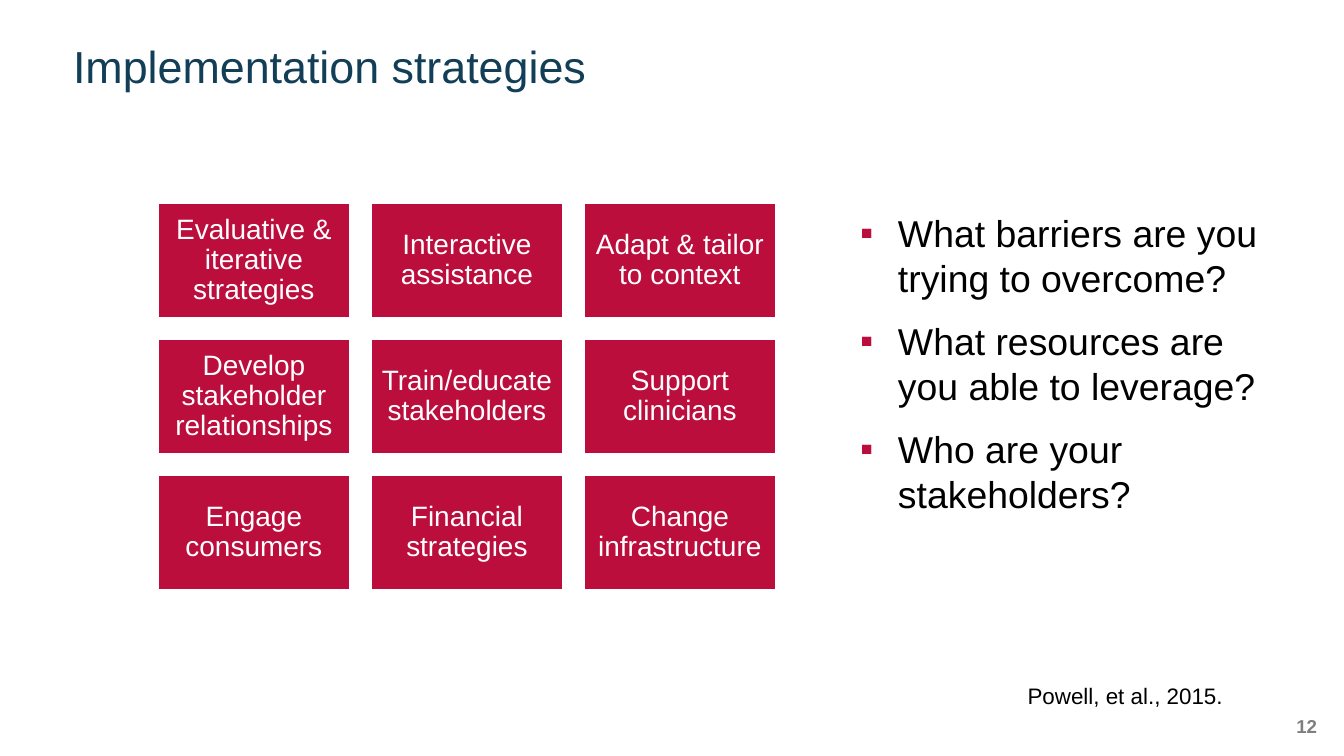
from lxml.etree import SubElement
from pptx import Presentation
from pptx.dml.color import RGBColor
from pptx.enum.shapes import MSO_SHAPE
from pptx.enum.text import MSO_ANCHOR, PP_ALIGN
from pptx.oxml.ns import qn
from pptx.util import Emu, Pt

EMU_PER_PX = 914400 / 134.4
CRIMSON = "BB0E3D"
STRATEGIES = [
    ["Evaluative & iterative strategies", "Interactive assistance", "Adapt & tailor to context"],
    ["Develop stakeholder relationships", "Train/educate stakeholders", "Support clinicians"],
    ["Engage consumers", "Financial strategies", "Change infrastructure"],
]
QUESTIONS = [
    "What barriers are you trying to overcome?",
    "What resources are you able to leverage?",
    "Who are your stakeholders?",
]


def px(length):
    """Turn pixels into EMU."""
    return Emu(round(length * EMU_PER_PX))


def color(hex_value):
    """Turn a hex string into a colour."""
    return RGBColor.from_string(hex_value)


def set_frame(frame, anchor, inset_x, inset_y):
    """Set wrapping, anchor and insets of a text frame."""
    frame.word_wrap = True
    frame.vertical_anchor = anchor
    frame.margin_left = frame.margin_right = px(inset_x)
    frame.margin_top = frame.margin_bottom = px(inset_y)


def add_run(paragraph, text, size, hex_value, bold=False):
    """Add one styled run to a paragraph."""
    run = paragraph.add_run()
    run.text = text
    run.font.name = "Arial"
    run.font.size = Pt(size)
    run.font.bold = bold
    run.font.color.rgb = color(hex_value)


def add_label(slide, box, text, size, hex_value, align=PP_ALIGN.LEFT,
              anchor=MSO_ANCHOR.TOP, inset=(0, 0), spacing=1.0, bold=False):
    """Add a text box with a single line of text."""
    frame = slide.shapes.add_textbox(*map(px, box)).text_frame
    set_frame(frame, anchor, *inset)
    paragraph = frame.paragraphs[0]
    paragraph.alignment = align
    paragraph.line_spacing = spacing
    add_run(paragraph, text, size, hex_value, bold)


def add_tile(slide, box, text):
    """Add one strategy rectangle with centred text."""
    tile = slide.shapes.add_shape(MSO_SHAPE.RECTANGLE, *map(px, box))
    tile.shadow.inherit = False
    tile.fill.solid()
    tile.fill.fore_color.rgb = color(CRIMSON)
    tile.line.color.rgb = color("FFFFFF")
    tile.line.width = Pt(2)
    set_frame(tile.text_frame, MSO_ANCHOR.MIDDLE, 8, 8)
    paragraph = tile.text_frame.paragraphs[0]
    paragraph.alignment = PP_ALIGN.CENTER
    paragraph.line_spacing = 0.9
    add_run(paragraph, text, 15, "FFFFFF")


def add_strategy_grid(slide, left, top):
    """Lay the strategy tiles out in rows and columns."""
    for row, names in enumerate(STRATEGIES):
        for column, name in enumerate(names):
            add_tile(slide, (left + 213 * column, top + 136 * row, 194, 117), name)


def set_bullet(paragraph, indent):
    """Give a paragraph a crimson square bullet with a hanging indent."""
    properties = paragraph._p.get_or_add_pPr()
    properties.set("marL", str(px(indent)))
    properties.set("indent", str(px(-indent)))
    bullet_color = SubElement(properties, qn("a:buClr"))
    SubElement(bullet_color, qn("a:srgbClr"), val=CRIMSON)
    SubElement(properties, qn("a:buFont"), typeface="Arial")
    SubElement(properties, qn("a:buChar"), char="▪")


def add_questions(slide, box):
    """Add the bulleted list of questions."""
    frame = slide.shapes.add_textbox(*map(px, box)).text_frame
    set_frame(frame, MSO_ANCHOR.TOP, 13, 7)
    for index, question in enumerate(QUESTIONS):
        paragraph = frame.add_paragraph() if index else frame.paragraphs[0]
        set_bullet(paragraph, 38)
        paragraph.space_after = Pt(10)
        add_run(paragraph, question, 20, "000000")


def main():
    """Build the slide and save it."""
    deck = Presentation()
    deck.slide_width, deck.slide_height = px(1344), px(756)
    slide = deck.slides.add_slide(deck.slide_layouts[6])
    add_label(slide, (73, 46, 1200, 47), "Implementation strategies", 24, "123E57",
              anchor=MSO_ANCHOR.BOTTOM, spacing=0.9)
    add_strategy_grid(slide, 157, 202)
    add_questions(slide, (847, 203, 448, 349))
    add_label(slide, (719, 675, 517, 40), "Powell, et al., 2015.", 12, "000000",
              align=PP_ALIGN.RIGHT, inset=(13, 7))
    add_label(slide, (1271, 715, 46, 27), "12", 10, "7F7F7F",
              align=PP_ALIGN.RIGHT, bold=True)
    deck.save("out.pptx")


if __name__ == "__main__":
    main()
